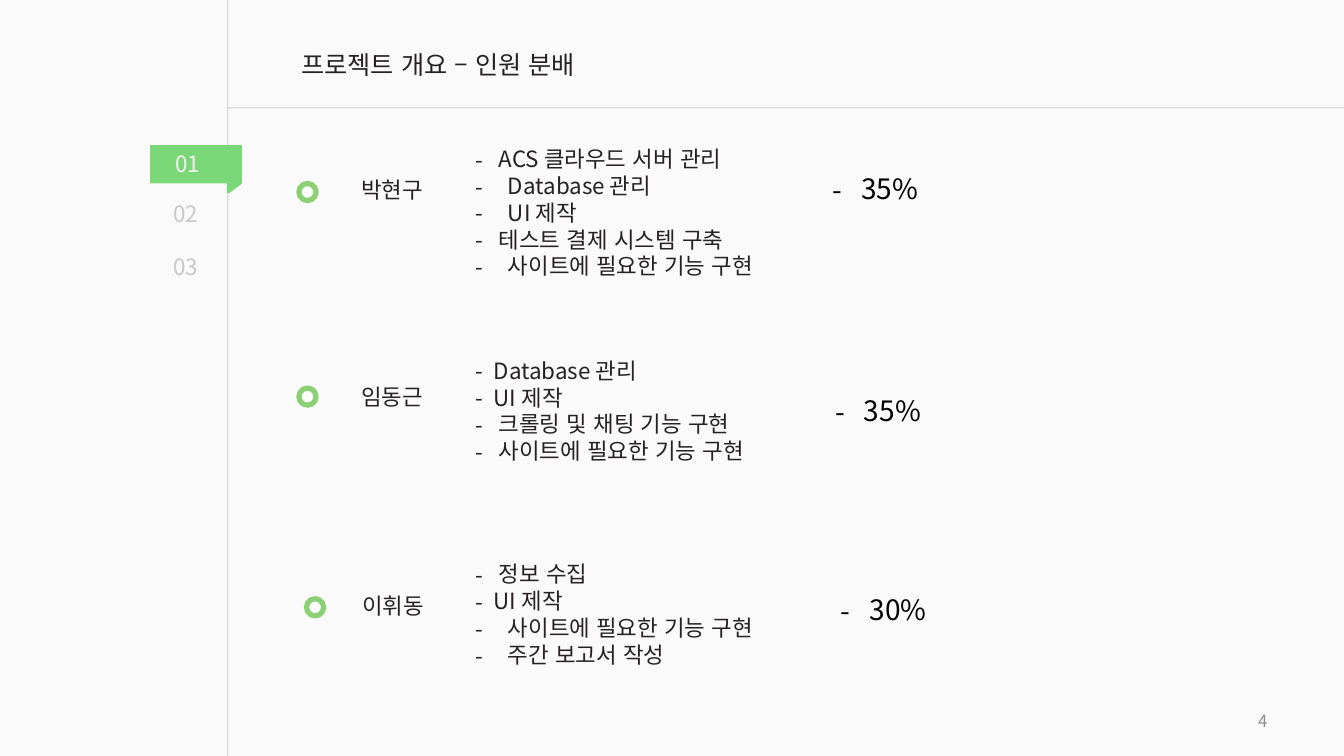
from dataclasses import dataclass

from lxml.etree import SubElement
from pptx import Presentation
from pptx.dml.color import RGBColor
from pptx.enum.lang import MSO_LANGUAGE_ID as Language
from pptx.enum.shapes import MSO_CONNECTOR as Connector, MSO_SHAPE as Preset
from pptx.enum.text import MSO_ANCHOR as Anchor, PP_ALIGN as Align
from pptx.oxml.ns import qn
from pptx.shapes.autoshape import Shape
from pptx.slide import Slide
from pptx.util import Inches, Pt

# The grid has square cells of a tenth of an inch.
CELL = Inches(0.1)
COLUMNS, ROWS = 133.3, 75
RULE_COLUMN, RULE_ROW = 22.6, 10.7
DUTY_COLUMN = 46.2
FONT = "Noto Sans CJK KR"
LINE_RATIO = 1.2
COLORS = {
    "background": "FAFAFA",
    "rule": "A6A6A6",
    "tab": "7BD878",
    "tab_text": "F2F2F2",
    "idle_tab": "C8C8C8",
    "ring": "8CD076",
    "ring_center": "FFFFFF",
    "ink": "272123",
    "share": "000000",
    "page": "8C8C8C",
}


@dataclass(frozen=True)
class Box:
    column: float
    row: float
    columns: float
    rows: float

    def emu(self) -> list[int]:
        return [round(n * CELL) for n in (self.column, self.row, self.columns, self.rows)]


@dataclass(frozen=True)
class Line:
    text: str
    hang: float = 0  # columns between the dash and its text; 0 means no dash


@dataclass(frozen=True)
class Style:
    size: int
    color: str
    align: Align = Align.LEFT
    anchor: Anchor = Anchor.TOP


@dataclass(frozen=True)
class Member:
    name: str
    name_at: tuple[float, float]
    ring_at: tuple[float, float]
    duty_row: float
    duties: tuple[Line, ...]
    share: str
    share_at: tuple[float, float]


@dataclass(frozen=True)
class Tab:
    label: str
    column: float
    row: float
    color: str


TABS = (
    Tab("01", 16.4, 14.4, "tab_text"),
    Tab("02", 16.2, 19.4, "idle_tab"),
    Tab("03", 16.2, 24.6, "idle_tab"),
)
NARROW, MIDDLE, WIDE = 1.8, 2.3, 3.2
MEMBERS = (
    Member("박현구", (33.8, 17), (29.65, 18.2), 13.9, (
        Line("ACS 클라우드 서버 관리", MIDDLE),
        Line("Database 관리", WIDE),
        Line("UI 제작", WIDE),
        Line("테스트 결제 시스템 구축", MIDDLE),
        Line("사이트에 필요한 기능 구현", WIDE),
    ), "35%", (81.6, 16.5)),
    Member("임동근", (33.8, 37.5), (29.65, 38.5), 34.9, (
        Line("Database 관리", NARROW),
        Line("UI 제작", NARROW),
        Line("크롤링 및 채팅 기능 구현", MIDDLE),
        Line("사이트에 필요한 기능 구현", MIDDLE),
    ), "35%", (81.85, 38.5)),
    Member("이휘동", (33.9, 58.3), (30.4, 59.4), 55.1, (
        Line("정보 수집", MIDDLE),
        Line("UI 제작", NARROW),
        Line("사이트에 필요한 기능 구현", WIDE),
        Line("주간 보고서 작성", WIDE),
    ), "30%", (82.4, 58.3)),
)


def rgb(color: str) -> RGBColor:
    return RGBColor.from_string(COLORS[color])


def add_rule(slide: Slide, start: tuple[float, float], end: tuple[float, float]) -> None:
    ends = [round(n * CELL) for n in (*start, *end)]
    rule = slide.shapes.add_connector(Connector.STRAIGHT, *ends)
    rule.line.width = Pt(0.75)
    rule.line.color.rgb = rgb("rule")
    properties = rule._element.spPr
    SubElement(properties.find(".//" + qn("a:srgbClr")), qn("a:alpha"), val="50000")
    SubElement(properties, qn("a:effectLst"))


def add_figure(slide: Slide, preset: Preset, box: Box, fill: str,
               outline: str = "", width: float = 0) -> Shape:
    figure = slide.shapes.add_shape(preset, *box.emu())
    figure.shadow.inherit = False
    figure.fill.solid()
    figure.fill.fore_color.rgb = rgb(fill)
    if outline:
        figure.line.color.rgb = rgb(outline)
        figure.line.width = Pt(width)
    else:
        figure.line.fill.background()
    return figure


def add_text(slide: Slide, box: Box, style: Style, *lines: Line) -> None:
    frame = slide.shapes.add_textbox(*box.emu()).text_frame
    frame.word_wrap = True
    frame.vertical_anchor = style.anchor
    for index, line in enumerate(lines):
        paragraph = frame.add_paragraph() if index else frame.paragraphs[0]
        paragraph.alignment = style.align
        paragraph.line_spacing = Pt(style.size * LINE_RATIO)
        if line.hang:
            properties = paragraph._p.get_or_add_pPr()
            hang = round(line.hang * CELL)
            properties.set("marL", str(hang))
            properties.set("indent", str(-hang))
            SubElement(properties, qn("a:buFont"), typeface=FONT)
            SubElement(properties, qn("a:buChar"), char="-")
        run = paragraph.add_run()
        run.text = line.text
        run.font.size = Pt(style.size)
        run.font.color.rgb = rgb(style.color)
        run.font.name = FONT
        run.font.language_id = Language.KOREAN
        SubElement(run._r.get_or_add_rPr(), qn("a:ea"), typeface=FONT)


def add_tabs(slide: Slide) -> None:
    add_figure(slide, Preset.RECTANGLE, Box(14.9, 14.4, 9.1, 3.8), "tab")
    fold = add_figure(slide, Preset.RIGHT_TRIANGLE, Box(22.8, 18, 0.9, 1.2), "tab", "tab", 2)
    fold.rotation = 90
    for tab in TABS:
        add_text(slide, Box(tab.column, tab.row, 5.9, 3.7), Style(16, tab.color), Line(tab.label))


def add_member(slide: Slide, member: Member) -> None:
    add_figure(slide, Preset.OVAL, Box(*member.ring_at, 1.7, 1.7), "ring_center", "ring", 3.75)
    add_text(slide, Box(*member.name_at, 10.2, 3.7), Style(16, "ink", Align.CENTER),
             Line(member.name))
    duty_rows = 1 + len(member.duties) * 16 * LINE_RATIO / 7.2
    add_text(slide, Box(DUTY_COLUMN, member.duty_row, 32.3, duty_rows), Style(16, "ink"),
             *member.duties)
    add_text(slide, Box(*member.share_at, 14.2, 4.4), Style(20, "share"),
             Line(member.share, 2.85))


def main() -> None:
    deck = Presentation()
    deck.slide_width, deck.slide_height = round(COLUMNS * CELL), ROWS * CELL
    slide = deck.slides.add_slide(deck.slide_layouts[6])
    slide.background.fill.solid()
    slide.background.fill.fore_color.rgb = rgb("background")

    add_rule(slide, (RULE_COLUMN, 0), (RULE_COLUMN, ROWS))
    add_rule(slide, (COLUMNS, RULE_ROW), (RULE_COLUMN, RULE_ROW))
    add_tabs(slide)
    add_text(slide, Box(27.3, 4.4, 32.3, 4), Style(18, "ink", Align.CENTER),
             Line("프로젝트 개요 – 인원 분배"))
    for member in MEMBERS:
        add_member(slide, member)
    add_text(slide, Box(95.6, 69.5, 31.1, 4),
             Style(12, "page", Align.RIGHT, Anchor.MIDDLE), Line("4"))
    deck.save("out.pptx")


if __name__ == "__main__":
    main()
